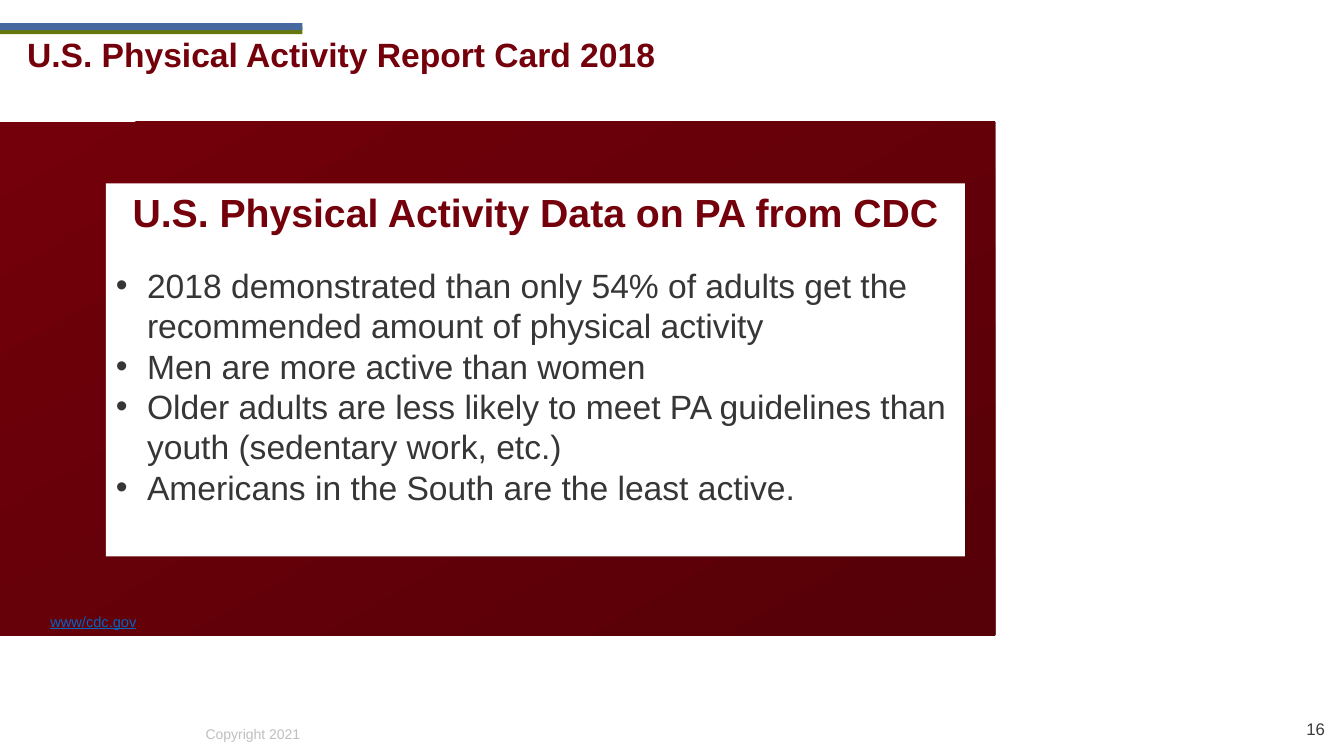
from typing import NamedTuple

from lxml import etree
from pptx import Presentation
from pptx.dml.color import RGBColor
from pptx.enum.shapes import MSO_SHAPE as SHAPE
from pptx.enum.text import MSO_ANCHOR as ANCHOR, MSO_AUTO_SIZE as AUTO, PP_ALIGN as ALIGN
from pptx.oxml.ns import qn
from pptx.util import Inches, Pt

COLORS = {
    "garnet": "73000A",
    "dark_garnet": "560007",
    "green": "65780B",
    "blue": "466A9F",
    "white": "FFFFFF",
    "body": "363636",
    "number": "3B3B3B",
    "link": "0563C1",
    "footer": "BFBFBF",
}

BULLETS = [
    "2018 demonstrated than only 54% of adults get the recommended amount of physical activity",
    "Men are more active than women",
    "Older adults are less likely to meet PA guidelines than youth (sedentary work, etc.)",
    "Americans in the South are the least active.",
]


class Box(NamedTuple):
    left: float
    top: float
    width: float
    height: float
    fill: str = ""


PANEL = Box(0, 1.21, 9.87, 5.09, "garnet")
CARD = Box(1.05, 1.82, 8.52, 3.7, "white")
BARS = [Box(0, 0.27, 3, 0.07, "green"), Box(0, 0.23, 3, 0.07, "blue")]
TITLE = Box(0.17, 0.29, 9.58, 0.5)
FOOTER = Box(1.94, 7.15, 1.15, 0.27)
NUMBER = Box(12.35, 7.03, 0.89, 0.4)


def rgb(name: str) -> RGBColor:
    return RGBColor.from_string(COLORS[name])


def add_rect(s, box: Box):
    sp = s.shapes.add_shape(SHAPE.RECTANGLE, *map(Inches, box[:4]))
    sp.shadow.inherit = False
    sp.fill.solid()
    sp.fill.fore_color.rgb = rgb(box.fill)
    sp.line.fill.background()
    sp.text_frame.vertical_anchor = ANCHOR.TOP
    return sp


def add_box(s, box: Box, wrap: bool = True, fit: bool = True, anchor=ANCHOR.TOP):
    tf = s.shapes.add_textbox(*map(Inches, box[:4])).text_frame
    tf.word_wrap = wrap
    tf.auto_size = AUTO.SHAPE_TO_FIT_TEXT if fit else AUTO.NONE
    tf.vertical_anchor = anchor
    return tf


def write(tf, text: str, *, size: float, color: str, bold: bool = False,
          underline: bool = False, align=ALIGN.LEFT, bullet: bool = False,
          before: float = 0) -> None:
    p = tf.paragraphs[0] if not tf.text else tf.add_paragraph()
    p.alignment = align
    if before:
        p.space_before = Pt(before)
    if bullet:
        pPr = p._p.get_or_add_pPr()
        pPr.set("marL", str(Inches(0.31)))
        pPr.set("indent", str(Inches(-0.31)))
        etree.SubElement(pPr, qn("a:buFont")).set("typeface", "Arial")
        etree.SubElement(pPr, qn("a:buChar")).set("char", "•")
    r = p.add_run()
    r.text = text
    r.font.name = "Arial"
    r.font.size = Pt(size)
    r.font.bold = bold
    r.font.underline = underline
    r.font.color.rgb = rgb(color)


def add_panel(s) -> None:
    sp = add_rect(s, PANEL)
    sp.fill.gradient()
    sp.fill.gradient_angle = 300
    for stop, name in zip(sp.fill.gradient_stops, ("garnet", "dark_garnet")):
        stop.color.rgb = rgb(name)
    tf = sp.text_frame
    tf.vertical_anchor = ANCHOR.BOTTOM
    tf.margin_left = Inches(0.5)
    write(tf, "www/cdc.gov", size=10.5, color="link", underline=True)


def add_card(s) -> None:
    tf = add_rect(s, CARD).text_frame
    write(tf, "U.S. Physical Activity Data on PA from CDC", size=28,
          color="garnet", bold=True, align=ALIGN.CENTER)
    for i, text in enumerate(BULLETS):
        write(tf, text, size=24, color="body", bullet=True, before=0 if i else 21)


def main() -> None:
    prs = Presentation()
    prs.slide_width, prs.slide_height = Inches(13.33), Inches(7.5)
    s = prs.slides.add_slide(prs.slide_layouts[6])
    write(add_box(s, FOOTER, wrap=False), "Copyright 2021", size=10, color="footer")
    add_panel(s)
    write(add_box(s, TITLE), "U.S. Physical Activity Report Card 2018",
          size=24, color="garnet", bold=True)
    for bar in BARS:
        add_rect(s, bar)
    write(add_box(s, NUMBER, fit=False, anchor=ANCHOR.MIDDLE), "16",
          size=12, color="number", align=ALIGN.RIGHT)
    add_card(s)
    prs.save("out.pptx")


if __name__ == "__main__":
    main()
